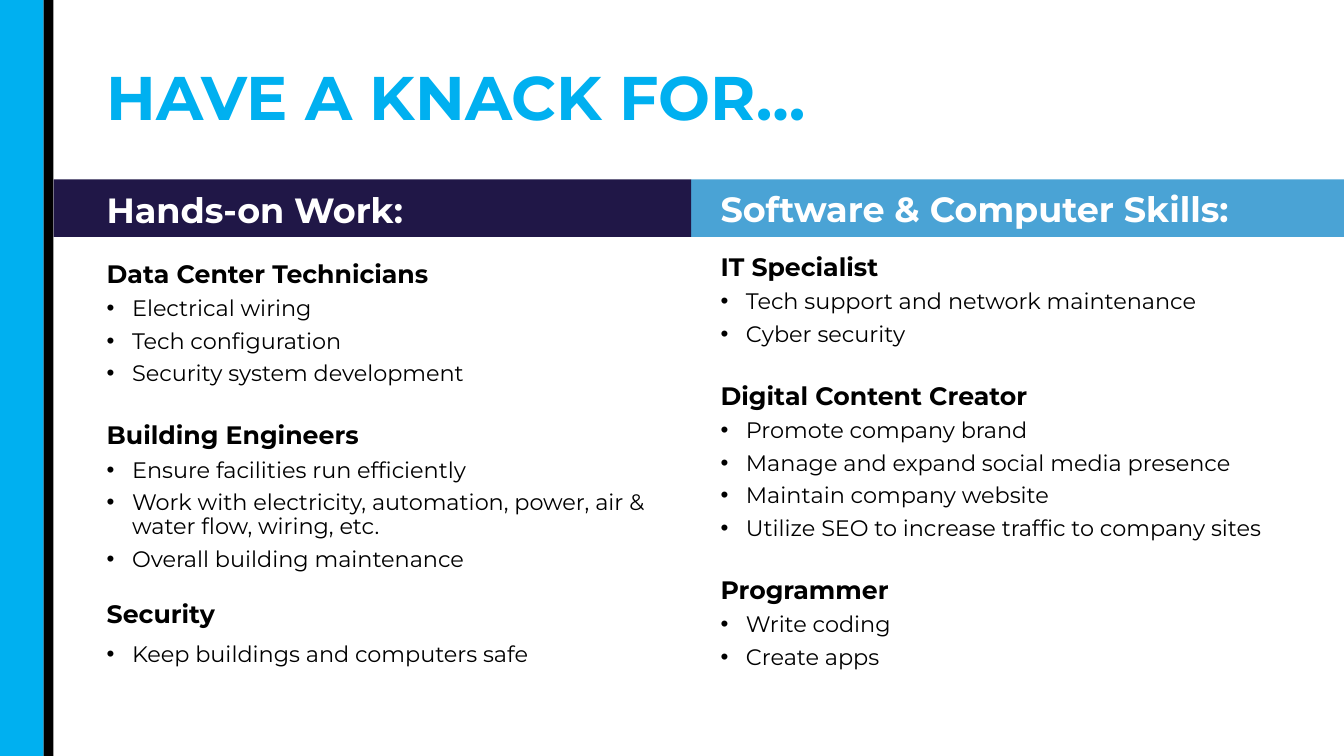
from lxml.etree import SubElement
from pptx import Presentation
from pptx.dml.color import RGBColor
from pptx.enum.shapes import MSO_SHAPE as Shape
from pptx.enum.text import MSO_ANCHOR as Anchor
from pptx.oxml.ns import qn
from pptx.util import Cm, Pt

CYAN = RGBColor(0x00, 0xB0, 0xF0)
BLUE = RGBColor(0x4A, 0xA3, 0xD5)
NAVY = RGBColor(0x20, 0x17, 0x47)
BLACK = RGBColor(0, 0, 0)
WHITE = RGBColor(255, 255, 255)

PAGE_WIDTH, PAGE_HEIGHT = 33.87, 19.05
STRIPE_WIDTH, EDGE_WIDTH = 1.1, 0.25
BAND_LEFT = STRIPE_WIDTH + EDGE_WIDTH
BAND_SPLIT, BAND_TOP, BAND_HEIGHT = 17.42, 4.52, 1.45
LEFT_COLUMN, RIGHT_COLUMN = 2.44, 17.91

# Each group: heading, space before it, space before its bullets, bullets
HANDS_ON = [
    ("Data Center Technicians", 0, 6,
     ["Electrical wiring", "Tech configuration", "Security system development"]),
    ("Building Engineers", 26, 6,
     ["Ensure facilities run efficiently",
      "Work with electricity, automation, power, air & water flow, wiring, etc.",
      "Overall building maintenance"]),
    ("Security", 21, 10, ["Keep buildings and computers safe"]),
]
SOFTWARE = [
    ("IT Specialist", 0, 6,
     ["Tech support and network maintenance", "Cyber security"]),
    ("Digital Content Creator", 26, 6,
     ["Promote company brand", "Manage and expand social media presence",
      "Maintain company website",
      "Utilize SEO to increase traffic to company sites"]),
    ("Programmer", 26, 6, ["Write coding", "Create apps"]),
]


def write(para, text, size=16, color=BLACK, bold=False, line=0.9, before=0,
          bullet=False):
    para.line_spacing = line
    para.space_before = Pt(before)
    if bullet:
        properties = para._p.get_or_add_pPr()
        properties.set("marL", str(Cm(0.64)))
        properties.set("indent", str(-Cm(0.64)))
        SubElement(properties, qn("a:buFont"), typeface="Arial")
        SubElement(properties, qn("a:buChar"), char="•")
    span = para.add_run()
    span.text = text
    font = span.font
    font.name, font.size, font.bold = "Montserrat", Pt(size), bold
    font.color.rgb = color


class Page:
    def __init__(self, deck):
        self.shapes = deck.slides.add_slide(deck.slide_layouts[6]).shapes

    def block(self, left, top, width, height, color):
        shape = self.shapes.add_shape(
            Shape.RECTANGLE, Cm(left), Cm(top), Cm(width), Cm(height))
        shape.shadow.inherit = False
        shape.fill.solid()
        shape.fill.fore_color.rgb = color
        shape.line.fill.background()

    def frame(self, left, top, width, height, anchor=Anchor.TOP):
        box = self.shapes.add_textbox(Cm(left), Cm(top), Cm(width), Cm(height))
        box.text_frame.word_wrap = True
        box.text_frame.vertical_anchor = anchor
        return box.text_frame

    def label(self, text, left, top, width, height, anchor=Anchor.TOP, **style):
        frame = self.frame(left, top, width, height, anchor)
        write(frame.paragraphs[0], text, bold=True, **style)

    def column(self, groups, left, top, width):
        frame = self.frame(left, top, width, 12)
        for number, (heading, gap, bullet_gap, items) in enumerate(groups):
            para = frame.add_paragraph() if number else frame.paragraphs[0]
            write(para, heading, size=18, bold=True, before=gap)
            for item in items:
                write(frame.add_paragraph(), item, before=bullet_gap, bullet=True)


def main():
    deck = Presentation()
    deck.slide_width, deck.slide_height = Cm(PAGE_WIDTH), Cm(PAGE_HEIGHT)
    page = Page(deck)

    page.block(0, 0, STRIPE_WIDTH, PAGE_HEIGHT, CYAN)
    page.block(STRIPE_WIDTH, 0, EDGE_WIDTH, PAGE_HEIGHT, BLACK)
    page.label("HAVE A KNACK FOR…", LEFT_COLUMN, 0.94, 22.86, 3.18,
               anchor=Anchor.MIDDLE, size=44, color=CYAN)

    page.block(BAND_SPLIT, BAND_TOP, PAGE_WIDTH - BAND_SPLIT, BAND_HEIGHT, BLUE)
    page.block(BAND_LEFT, BAND_TOP, BAND_SPLIT - BAND_LEFT, BAND_HEIGHT, NAVY)
    page.label("Hands-on Work:", LEFT_COLUMN, 4.62, 9, 1.32,
               size=25, color=WHITE, line=1.0)
    page.label("Software & Computer Skills:", RIGHT_COLUMN, 4.8, 13.67, 1.12,
               size=25, color=WHITE, line=0.8)

    page.column(HANDS_ON, LEFT_COLUMN, 6.47, 15.54)
    page.column(SOFTWARE, RIGHT_COLUMN, 6.3, 14.96)
    deck.save("out.pptx")


if __name__ == "__main__":
    main()
